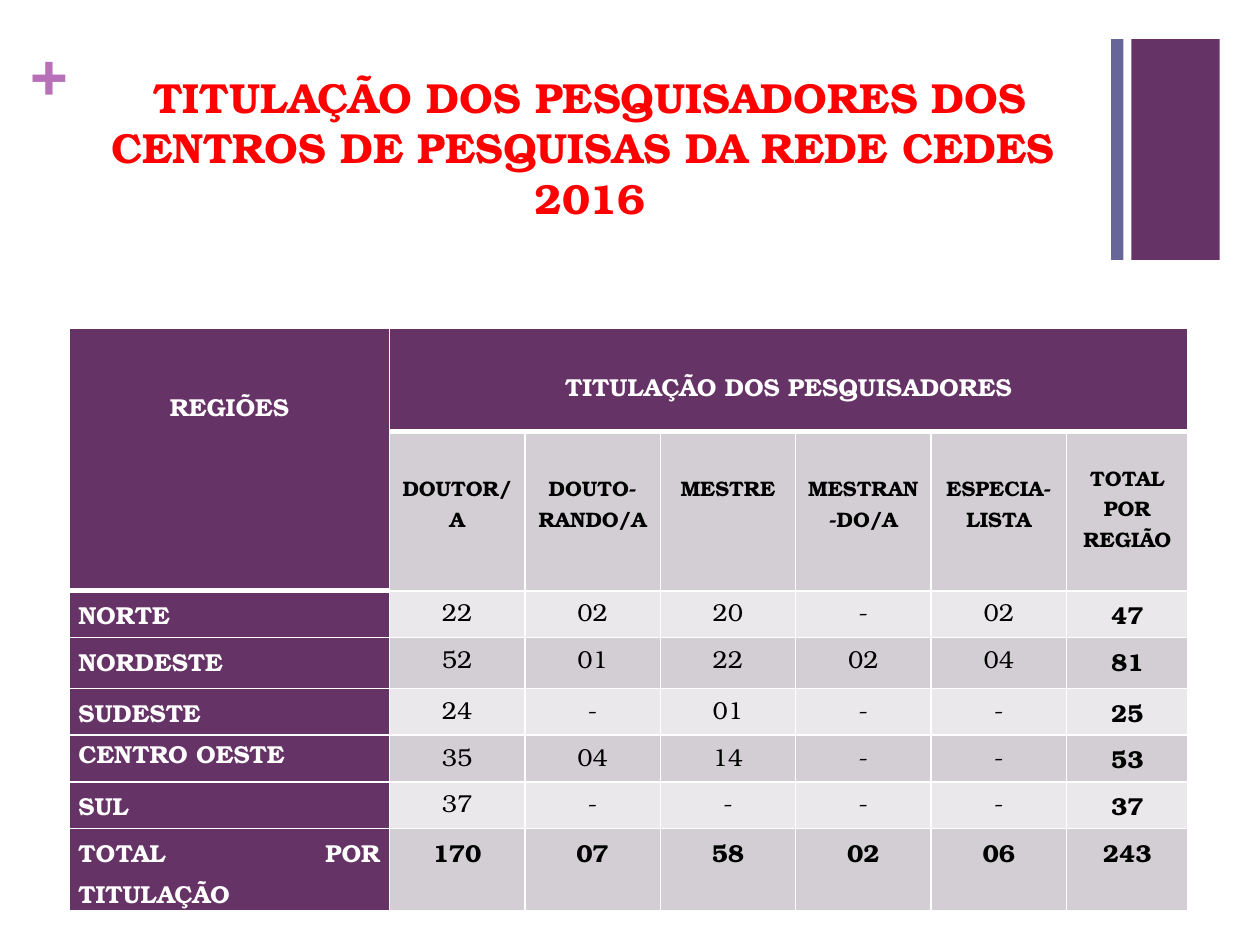
from lxml import etree
from pptx import Presentation
from pptx.dml.color import RGBColor
from pptx.enum.shapes import MSO_SHAPE as Shape
from pptx.enum.text import MSO_ANCHOR as Anchor, PP_ALIGN as Align
from pptx.oxml.ns import qn
from pptx.util import Cm, Pt

FONT = "TeX Gyre Bonum"
PURPLE, BLUE, PINK, RED = "663366", "666699", "B870B8", "FF0000"
WHITE, BLACK, DARK_BAND, LIGHT_BAND = "FFFFFF", "000000", "D3CED3", "EAE8EA"

COLUMN_WIDTHS = [6.45] + [2.73] * 5 + [2.45]
ROW_HEIGHTS = [2.08, 3.21, 0.94, 1.03, 0.94, 0.94, 0.94, 1.65]
DEGREES = ["DOUTOR/A", "DOUTO-RANDO/A", "MESTRE", "MESTRAN-DO/A",
           "ESPECIA-LISTA", "TOTAL\nPOR REGIÃO"]
REGIONS = [
    ["NORTE", "22", "02", "20", "-", "02", "47"],
    ["NORDESTE", "52", "01", "22", "02", "04", "81"],
    ["SUDESTE", "24", "-", "01", "-", "-", "25"],
    ["CENTRO OESTE", "35", "04", "14", "-", "-", "53"],
    ["SUL", "37", "-", "-", "-", "-", "37"],
    ["TOTAL POR TITULAÇÃO", "170", "07", "58", "02", "06", "243"],
]


def rgb(color):
    return RGBColor.from_string(color)


def format_text(text_frame, size, color, bold=True, align=Align.CENTER, spacing=None):
    for paragraph in text_frame.paragraphs:
        paragraph.alignment = align
        paragraph.line_spacing = spacing
        for run in paragraph.runs:
            font = run.font
            font.name, font.size, font.bold = FONT, Pt(size), bold
            font.color.rgb = rgb(color)


def add_bar(slide, left, width, color):
    shape = slide.shapes.add_shape(Shape.RECTANGLE, Cm(left), Cm(0.79), Cm(width), Cm(4.45))
    shape.shadow.inherit = False
    shape.fill.solid()
    shape.fill.fore_color.rgb = rgb(color)
    shape.line.fill.background()


def add_plus(slide):
    text_frame = slide.shapes.add_textbox(Cm(0.61), Cm(0.64), Cm(0.74), Cm(1.55)).text_frame
    text_frame.margin_left = text_frame.margin_right = 0
    text_frame.margin_top = text_frame.margin_bottom = 0
    text_frame.text = "+"
    format_text(text_frame, 36, PINK, align=Align.LEFT)


def set_title(slide):
    title = slide.shapes.title
    title.left, title.top, title.width, title.height = Cm(1.4), Cm(1.19), Cm(20.98), Cm(3.4)
    text_frame = title.text_frame
    text_frame.text = ("TITULAÇÃO DOS PESQUISADORES DOS CENTROS DE PESQUISAS "
                       "DA REDE CEDES \v2016")
    text_frame.word_wrap = True
    text_frame.vertical_anchor = Anchor.MIDDLE
    text_frame.margin_top = Cm(0.27)
    format_text(text_frame, 24, RED, spacing=Pt(29))


def set_borders(cell, top=1, bottom=1):
    properties = cell._tc.get_or_add_tcPr()
    widths = {"a:lnL": 1, "a:lnR": 1, "a:lnT": top, "a:lnB": bottom}
    for position, (tag, width) in enumerate(widths.items()):
        line = etree.Element(qn(tag), w=str(Pt(width)))
        fill = etree.SubElement(line, qn("a:solidFill"))
        etree.SubElement(fill, qn("a:srgbClr"), val=WHITE)
        properties.insert(position, line)


def fill_cell(cell, text, fill, size=14, color=BLACK, margin_top=0, **text_format):
    cell.margin_left = cell.margin_right = Cm(0.18)
    cell.margin_top, cell.margin_bottom = Pt(margin_top), 0
    cell.vertical_anchor = Anchor.TOP
    cell.fill.solid()
    cell.fill.fore_color.rgb = rgb(fill)
    cell.text_frame.text = text
    format_text(cell.text_frame, size, color, **text_format)


def fill_header(table):
    for column in range(len(COLUMN_WIDTHS)):
        fill_cell(table.cell(0, column), "", PURPLE)
        set_borders(table.cell(0, column), bottom=3)
    fill_cell(table.cell(0, 0), "REGIÕES", PURPLE, color=WHITE, margin_top=31, spacing=1.15)
    fill_cell(table.cell(0, 1), "TITULAÇÃO DOS PESQUISADORES", PURPLE, color=WHITE,
              margin_top=19.4, spacing=1.15)
    fill_cell(table.cell(1, 0), "", PURPLE)
    set_borders(table.cell(1, 0), bottom=3)
    for column, degree in enumerate(DEGREES, 1):
        margin_top = 17.4 if "\n" in degree else 23.4
        fill_cell(table.cell(1, column), degree, DARK_BAND, size=12, margin_top=margin_top)
        set_borders(table.cell(1, column), top=3)
    table.cell(0, 0).merge(table.cell(1, 0))
    table.cell(0, 1).merge(table.cell(0, 6))


def fill_regions(table):
    last = len(REGIONS) - 1
    for index, (region, *values) in enumerate(REGIONS):
        row = index + 2
        fill_cell(table.cell(row, 0), region, PURPLE, color=WHITE,
                  align=Align.JUSTIFY if index >= last - 1 else Align.LEFT,
                  spacing=None if region == "CENTRO OESTE" else 1.15)
        set_borders(table.cell(row, 0), top=3 if index == 0 else 1)
        for column, value in enumerate(values, 1):
            cell = table.cell(row, column)
            fill_cell(cell, value, DARK_BAND if index % 2 else LIGHT_BAND,
                      bold=index == last or column == len(values), spacing=1.15)
            set_borders(cell)


def add_degree_table(slide):
    frame = slide.shapes.add_table(len(ROW_HEIGHTS), len(COLUMN_WIDTHS), Cm(1.4), Cm(6.62),
                                   Cm(sum(COLUMN_WIDTHS)), Cm(sum(ROW_HEIGHTS)))
    table = frame.table
    table.horz_banding = False
    for column, width in zip(table.columns, COLUMN_WIDTHS):
        column.width = Cm(width)
    for row, height in zip(table.rows, ROW_HEIGHTS):
        row.height = Cm(height)
    fill_header(table)
    fill_regions(table)


def main():
    presentation = Presentation()
    presentation.slide_width, presentation.slide_height = Cm(25.4), Cm(19.05)
    slide = presentation.slides.add_slide(presentation.slide_layouts[5])
    add_bar(slide, 22.81, 1.78, PURPLE)
    add_plus(slide)
    add_bar(slide, 22.4, 0.25, BLUE)
    set_title(slide)
    add_degree_table(slide)
    presentation.save("out.pptx")


if __name__ == "__main__":
    main()
